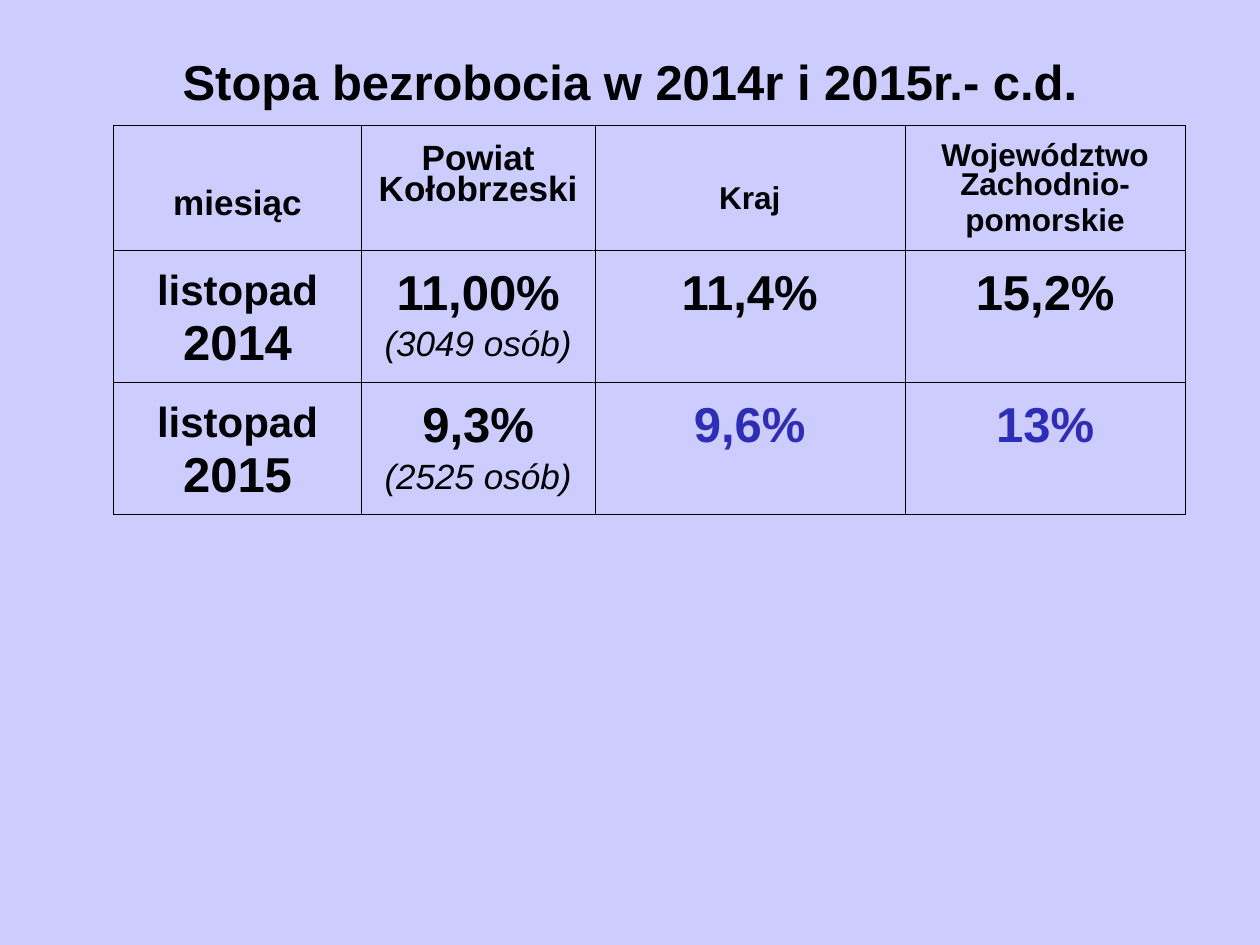
from lxml.etree import SubElement
from pptx import Presentation
from pptx.dml.color import RGBColor
from pptx.enum.text import MSO_ANCHOR, PP_ALIGN
from pptx.oxml.ns import qn
from pptx.util import Inches, Pt

BACKGROUND, BLACK, BLUE = "CCCCFF", "000000", "2D2DB9"
TITLE = "Stopa bezrobocia w 2014r i 2015r.- c.d."
COLUMNS = [1.97, 1.85, 2.46, 2.23]
ROWS = [0.95, 1, 1]
HEADERS = [
    (["miesiąc"], 20, 0.52, 4.5),
    (["Powiat Kołobrzeski"], 20, 0.16, 5),
    (["Kraj"], 18, 0.49, 4.5),
    (["Województwo Zachodnio-", "pomorskie"], 18, 0.15, 4.5),
]
MONTHS = [
    ("listopad", "2014", "11,00%", "(3049 osób)", "11,4%", "15,2%", BLACK),
    ("listopad", "2015", "9,3%", "(2525 osób)", "9,6%", "13%", BLUE),
]


def add_text(para, text, size, color=BLACK, italic=False):
    """Add one centred Arial run, bold unless italic."""
    para.alignment = PP_ALIGN.CENTER
    span = para.add_run()
    span.text = text
    span.font.name, span.font.size = "Arial", Pt(size)
    span.font.bold, span.font.italic = not italic, italic
    span.font.color.rgb = RGBColor.from_string(color)


def add_borders(cell, widths):
    """Draw the left, right, top and bottom borders of a cell."""
    properties = cell._tc.get_or_add_tcPr()
    for side, width in zip(("lnL", "lnR", "lnT", "lnB"), widths):
        line = SubElement(properties, qn(f"a:{side}"), w=str(int(Pt(width))))
        fill = SubElement(line, qn("a:solidFill"))
        SubElement(fill, qn("a:srgbClr"), val=BLACK)


def fill_cell(cell, lines, top, before):
    """Write (text, size, colour, italic) lines into a cell."""
    cell.margin_left = cell.margin_right = Inches(0.1)
    cell.margin_top, cell.margin_bottom = Inches(top), Inches(0.05)
    for index, line in enumerate(lines):
        frame = cell.text_frame
        para = frame.add_paragraph() if index else frame.paragraphs[0]
        para.line_spacing, para.space_before = 0.81, Pt(before)
        add_text(para, *line)


def add_title(page):
    """Place the title above the table."""
    box = page.shapes.add_textbox(Inches(0.5), Inches(0.3), Inches(9), Inches(0.69))
    frame = box.text_frame
    frame.word_wrap, frame.vertical_anchor = True, MSO_ANCHOR.MIDDLE
    add_text(frame.paragraphs[0], TITLE, 28)


def add_rates(page):
    """Build the table of unemployment rates."""
    frame = page.shapes.add_table(
        len(ROWS), len(COLUMNS), Inches(0.9), Inches(0.99),
        Inches(sum(COLUMNS)), Inches(sum(ROWS)))
    table = frame.table
    table.first_row = table.horz_banding = False
    for column, width in zip(table.columns, COLUMNS):
        column.width = Inches(width)
    for row, height in zip(table.rows, ROWS):
        row.height = Inches(height)

    for column, (texts, size, top, before) in enumerate(HEADERS):
        fill_cell(table.cell(0, column), [(text, size) for text in texts], top, before)
    for row, (month, year, county, people, country, region, color) in enumerate(MONTHS, 1):
        contents = [
            [(month, 24), (year, 28)],
            [(county, 28), (people, 20, BLACK, True)],
            [(country, 28, color)],
            [(region, 28, color)],
        ]
        for column, lines in enumerate(contents):
            fill_cell(table.cell(row, column), lines, 0.2, 7)

    thin, outer = 0.11, 0.23
    for row in range(len(ROWS)):
        for column in range(len(COLUMNS)):
            cell = table.cell(row, column)
            add_borders(cell, (
                thin if column else outer,
                outer if column == len(COLUMNS) - 1 else thin,
                thin if row else outer,
                thin))
            cell.fill.background()


def main():
    """Build and save the slide."""
    deck = Presentation()
    deck.slide_width, deck.slide_height = Inches(10), Inches(7.5)
    page = deck.slides.add_slide(deck.slide_layouts[6])
    page.background.fill.solid()
    page.background.fill.fore_color.rgb = RGBColor.from_string(BACKGROUND)
    add_title(page)
    add_rates(page)
    deck.save("out.pptx")


if __name__ == "__main__":
    main()
